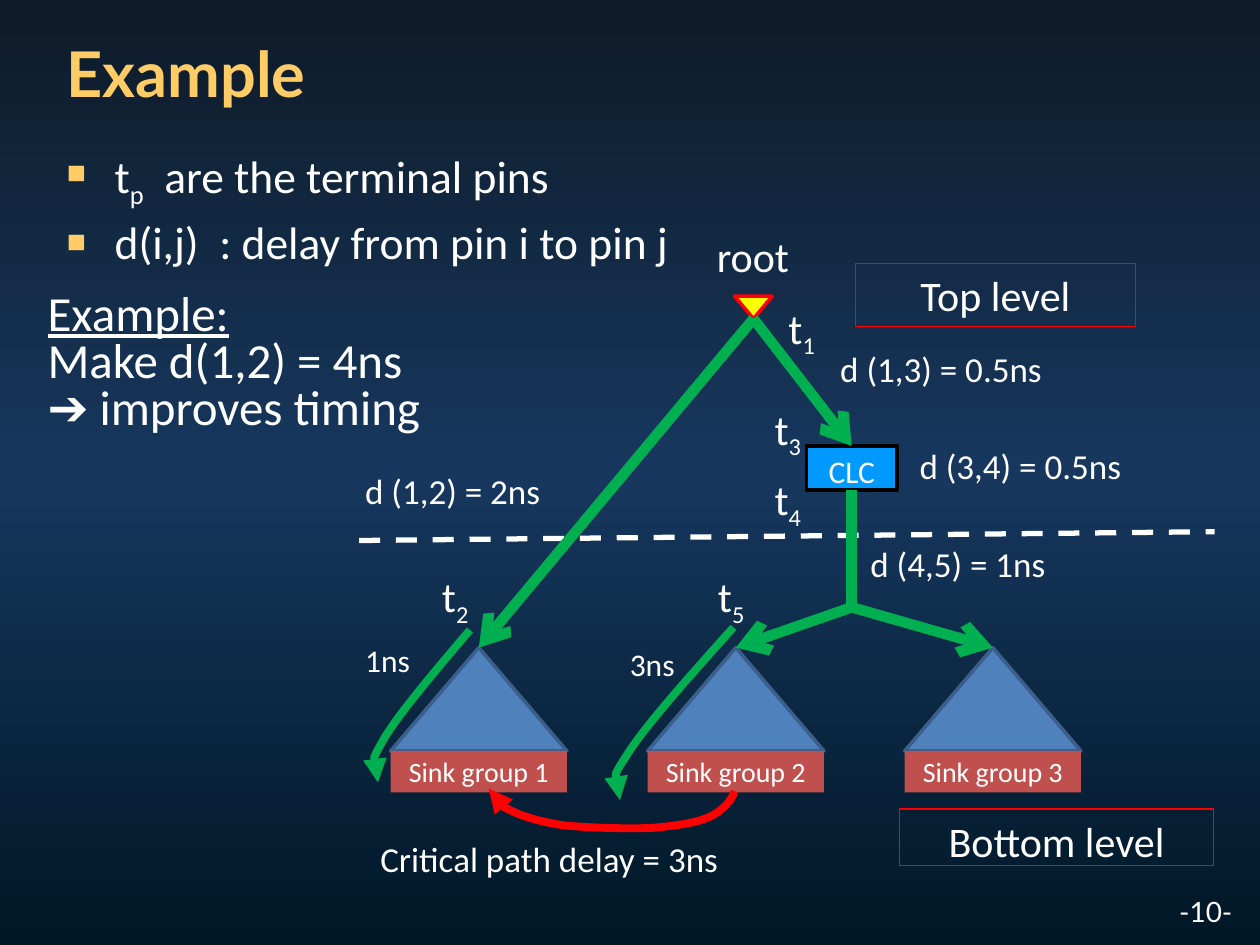
"""Build the clock tree example slide with its delay labels."""
from copy import deepcopy

from lxml import etree
from pptx import Presentation
from pptx.dml.color import RGBColor
from pptx.enum.dml import MSO_LINE
from pptx.enum.shapes import MSO_CONNECTOR, MSO_SHAPE
from pptx.enum.text import MSO_ANCHOR, PP_ALIGN
from pptx.oxml.ns import qn
from pptx.util import Inches, Pt

LEFT, CENTER = PP_ALIGN.LEFT, PP_ALIGN.CENTER
TOP, MIDDLE = MSO_ANCHOR.TOP, MSO_ANCHOR.MIDDLE
RECTANGLE, TRIANGLE = MSO_SHAPE.RECTANGLE, MSO_SHAPE.ISOSCELES_TRIANGLE
STRAIGHT, DASH = MSO_CONNECTOR.STRAIGHT, MSO_LINE.DASH
WHITE, GOLD, GREEN, RED = "FFFFFF", "FFCC66", "00B050", "FF0000"

BACKDROP = [(0, "001726"), (0.5, "17375E"), (1, "0E1B28")]
TITLE = "Example"
# An underscore switches between normal text and subscript.
BULLETS = ["t_p_  are the terminal pins", "d(i,j)  : delay from pin i to pin j"]
TASK = "Example:\vMake d(1,2) = 4ns \v➔ improves timing"

# text, size, left, top, width, height
SNUG_LABELS = [
    ("t_1", 24, 6.16, 2.35, 0.43, 0.5),
    ("t_2", 24, 3.41, 4.48, 0.43, 0.5),
    ("t_3", 24, 6.05, 3.15, 0.43, 0.5),
    ("t_4", 24, 6.05, 3.71, 0.43, 0.5),
    ("t_5", 24, 5.6, 4.48, 0.43, 0.5),
    ("root", 24, 5.59, 1.78, 0.79, 0.5),
    ("Critical path delay = 3ns", 20, 2.92, 6.6, 2.92, 0.4),
]
DELAY_LABELS = [
    ("d (1,2) = 2ns", 20, 2.8, 3.68, 1.96, 0.44),
    ("d (1,3) = 0.5ns", 20, 6.57, 2.71, 2.29, 0.44),
    ("d (3,4) = 0.5ns", 20, 7.2, 3.48, 2.33, 0.44),
    ("d (4,5) = 1ns", 20, 6.81, 4.26, 1.89, 0.44),
    ("1ns", 18, 2.8, 5.04, 0.79, 0.4),
    ("3ns", 18, 4.9, 5.07, 0.71, 0.4),
]
LEVELS = [("Top level", 6.79, 2.09, 2.22, 0.5), ("Bottom level", 7.14, 6.42, 2.49, 0.45)]

SINKS = ["Sink group 1", "Sink group 2", "Sink group 3"]
SINK_LEFT, SINK_PITCH, SINK_WIDTH = 3.1, 2.04, 1.4
APEX_TOP, TREE_HEIGHT, SINK_HEIGHT = 5.14, 0.82, 0.33
ROOT_TIP, FORK = (5.98, 2.53), (6.76, 4.82)
CLC_BOX = (6.4, 3.54, 0.72, 0.35)

# colour, start point, then control points in threes
CURVES = [
    (GREEN, [(3.73, 5), (3.45, 5.33), (3.17, 5.66), (3.05, 5.86),
             (2.93, 6.07), (2.97, 6.14), (3, 6.21)]),
    (GREEN, [(5.82, 4.98), (5.48, 5.36), (5.14, 5.74), (4.99, 5.97),
             (4.84, 6.2), (4.88, 6.27), (4.92, 6.35)]),
    (RED, [(5.83, 6.28), (5.81, 6.35), (5.74, 6.43), (5.64, 6.48),
           (5.53, 6.53), (5.39, 6.55), (5.19, 6.57),
           (5, 6.58), (4.66, 6.57), (4.47, 6.55),
           (4.27, 6.52), (4.12, 6.47), (4.03, 6.42),
           (3.93, 6.37), (3.87, 6.28), (3.88, 6.26)]),
]


def rgb(code):
    return RGBColor.from_string(code)


def inches(lengths):
    return [Inches(length) for length in lengths]


def write(paragraph, text, size, align=LEFT, font="Calibri", color=WHITE, spacing=None):
    paragraph.alignment = align
    paragraph.line_spacing = spacing
    first, *others = text.split("_")
    paragraph.text = first
    for position, part in enumerate(others):
        run = paragraph.add_run()
        run.text = part
        if position % 2 == 0:
            run.font._element.set("baseline", "-25000")
    for run in paragraph.runs:
        run.font.size, run.font.name = Pt(size), font
        run.font.color.rgb = rgb(color)


def label(shapes, text, size, *box, wrap=True, **style):
    frame = shapes.add_textbox(*inches(box)).text_frame
    frame.word_wrap = wrap
    write(frame.paragraphs[0], text, size, **style)
    return frame.paragraphs[0]


def block(shapes, kind, box, fill=None, line=None, width=2):
    shape = shapes.add_shape(kind, *inches(box))
    shape.shadow.inherit = False
    if fill:
        shape.fill.solid()
        shape.fill.fore_color.rgb = rgb(fill)
    else:
        shape.fill.background()
    if line:
        shape.line.color.rgb, shape.line.width = rgb(line), Pt(width)
    else:
        shape.line.fill.background()
    return shape


def caption(shape, text, size, anchor=TOP, wrap=True):
    shape.text_frame.word_wrap = wrap
    shape.text_frame.vertical_anchor = anchor
    write(shape.text_frame.paragraphs[0], text, size, CENTER)


def stroke(shape, color, width, head=None):
    shape.line.color.rgb, shape.line.width = rgb(color), Pt(width)
    if head:
        etree.SubElement(shape.line._get_or_add_ln(), qn("a:tailEnd"), type=head)


def connect(shapes, start, end, color=GREEN, width=6, head=None):
    line = shapes.add_connector(STRAIGHT, *inches(start + end))
    stroke(line, color, width, head)
    etree.SubElement(line._element.spPr, qn("a:effectLst"))
    return line


def curve(shapes, color, points):
    start, *controls = [tuple(inches(point)) for point in points]
    builder = shapes.build_freeform(*start)
    builder.add_line_segments(controls, close=False)
    shape = builder.convert_to_shape()
    shape.shadow.inherit = False
    shape.fill.background()
    segments = list(shape._element.iter(qn("a:lnTo")))
    for first in range(0, len(segments), 3):
        bezier = etree.SubElement(segments[first].getparent(), qn("a:cubicBezTo"))
        for segment in segments[first:first + 3]:
            bezier.append(segment[0])
            segment.getparent().remove(segment)
    stroke(shape, color, 4.5, "triangle")


def paint_backdrop(slide):
    fill = slide.background.fill
    fill.gradient()
    fill.gradient_angle = 90
    stops = slide._element.find(".//" + qn("a:gsLst"))
    stops.append(deepcopy(stops[0]))
    for stop, (position, color) in zip(fill.gradient_stops, BACKDROP):
        stop.position, stop.color.rgb = position, rgb(color)


def place(placeholder, *box):
    placeholder.left, placeholder.top, placeholder.width, placeholder.height = inches(box)
    return placeholder.text_frame


def add_title(slide):
    frame = place(slide.shapes.title, 0.43, 0.22, 9.28, 0.78)
    frame.vertical_anchor = MIDDLE
    write(frame.paragraphs[0], TITLE, 36, font="Lato", color=GOLD, spacing=0.9)
    font = frame.paragraphs[0].runs[0].font
    font.bold = True
    effects = etree.Element(qn("a:effectLst"))
    shadow = etree.SubElement(effects, qn("a:outerShdw"), dist="53882", dir="2700000")
    etree.SubElement(shadow, qn("a:srgbClr"), val="000000")
    font._element.find(qn("a:solidFill")).addnext(effects)


def add_bullets(slide):
    frame = place(slide.placeholders[1], 0.43, 1.15, 9.37, 6.19)
    frame.text = "\n".join(BULLETS)
    for paragraph, text in zip(frame.paragraphs, BULLETS):
        write(paragraph, text, 26, spacing=0.85)
        paragraph.space_before = Pt(10.4)
        props = paragraph._p.get_or_add_pPr()
        props.set("marL", str(Inches(0.38)))
        props.set("indent", str(-Inches(0.38)))
        color = etree.SubElement(props, qn("a:buClr"))
        etree.SubElement(color, qn("a:srgbClr"), val=GOLD)
        etree.SubElement(props, qn("a:buSzPct"), val="70000")
        etree.SubElement(props, qn("a:buChar"), char="■")


def add_tree(shapes):
    apexes = []
    for column, sink in enumerate(SINKS):
        left = SINK_LEFT + column * SINK_PITCH
        apexes.append((left + SINK_WIDTH / 2, APEX_TOP))
        block(shapes, TRIANGLE, (left, APEX_TOP, SINK_WIDTH, TREE_HEIGHT), "4F81BD", "3A5F8C")
        base = (left, APEX_TOP + TREE_HEIGHT, SINK_WIDTH, SINK_HEIGHT)
        caption(block(shapes, RECTANGLE, base, "C0504D"), sink, 16, MIDDLE)
    root = block(shapes, TRIANGLE, (5.83, 2.35, 0.3, 0.18), "FFFF00", RED)
    root._element.spPr.find(qn("a:xfrm")).set("flipV", "1")
    clc = block(shapes, RECTANGLE, CLC_BOX, "0099FF", "000000")
    caption(clc, "CLC", 18, wrap=False)
    connect(shapes, (2.85, 4.29), (9.64, 4.22), WHITE, 3).line.dash_style = DASH
    connect(shapes, ROOT_TIP, apexes[0], head="arrow")
    connect(shapes, ROOT_TIP, (6.76, 3.54), head="arrow").end_connect(clc, 0)
    connect(shapes, (6.76, 3.89), FORK).begin_connect(clc, 2)
    for apex in apexes[1:]:
        connect(shapes, FORK, apex, head="arrow")


def main():
    deck = Presentation()
    deck.slide_width, deck.slide_height = inches((10, 7.5))
    slide = deck.slides.add_slide(deck.slide_layouts[1])
    shapes = slide.shapes
    paint_backdrop(slide)
    add_title(slide)
    add_bullets(slide)
    add_tree(shapes)
    for color, points in CURVES:
        curve(shapes, color, points)
    for text, *box in LEVELS:
        caption(block(shapes, RECTANGLE, box, line=RED, width=0.75), text, 24)
    for entry in SNUG_LABELS:
        label(shapes, *entry, wrap=False)
    for entry in DELAY_LABELS:
        label(shapes, *entry)
    task = label(shapes, TASK, 28, 0.28, 2.28, 3.56, 1.23, spacing=0.8)
    task.runs[0].font.underline = True
    label(shapes, "-10-", 16, 9.22, 7.05, 0.7, 0.37, wrap=False, align=CENTER, font="Lato")
    deck.save("out.pptx")


if __name__ == "__main__":
    main()
